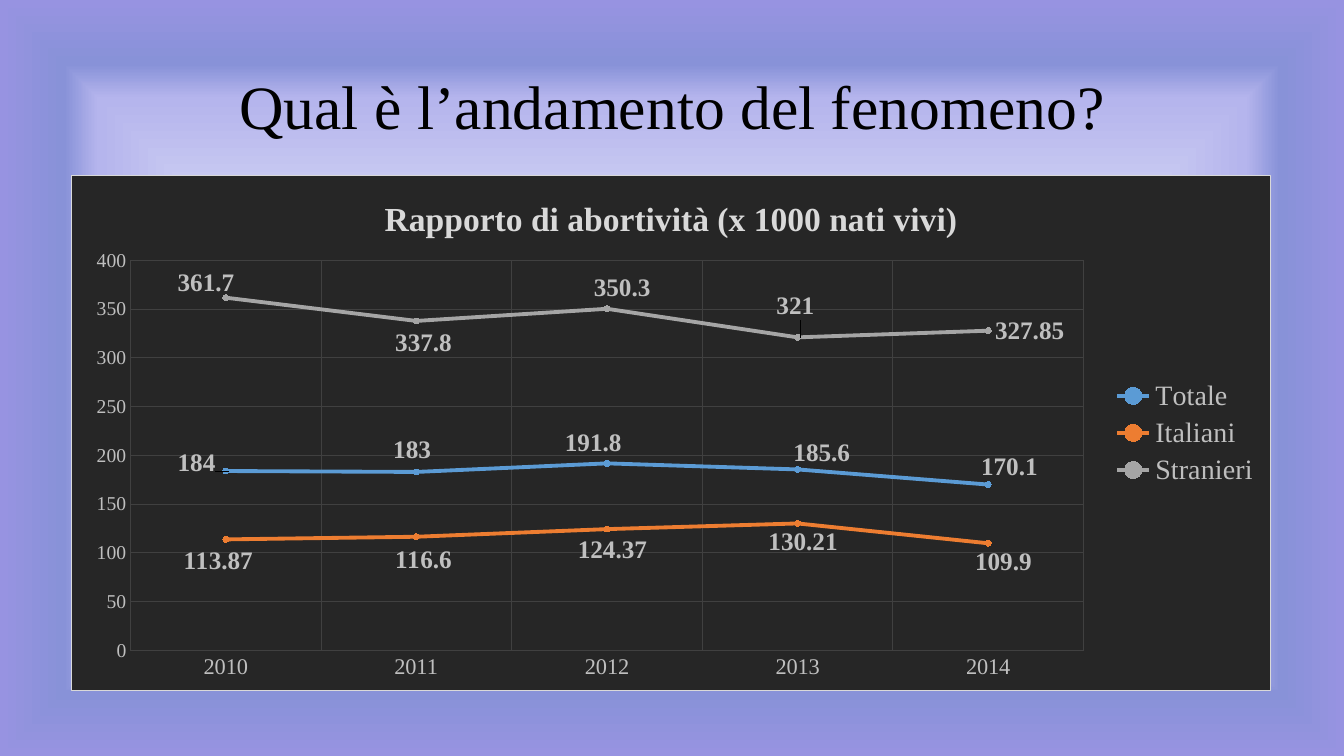
from dataclasses import dataclass

from lxml.etree import fromstring
from pptx import Presentation
from pptx.chart.data import CategoryChartData
from pptx.dml.color import RGBColor
from pptx.enum.chart import XL_CHART_TYPE as ChartType
from pptx.enum.chart import XL_LEGEND_POSITION as LegendPosition
from pptx.enum.chart import XL_MARKER_STYLE as MarkerStyle
from pptx.enum.chart import XL_TICK_MARK as TickMark
from pptx.enum.text import MSO_ANCHOR as Anchor
from pptx.enum.text import PP_ALIGN as Align
from pptx.oxml.ns import nsdecls, qn
from pptx.util import Emu, Pt


@dataclass(frozen=True)
class Theme:
    """Colours, font and type sizes of the slide."""

    font: str = "Times New Roman"
    ink: str = "000000"
    panel: str = "262626"
    border: str = "D9D9D9"
    grid: str = "404040"
    label: str = "BFBFBF"
    title_size: int = 44
    chart_title_size: int = 24
    legend_size: int = 20
    label_size: int = 18
    category_size: int = 16
    value_size: int = 14
    backdrop: tuple = ((0, "F7FAFD"), (74, "B5B5ED"), (83, "8892D8"), (100, "9793E1"))


@dataclass(frozen=True)
class Trend:
    """One line of the chart, with label offsets in px from the default place."""

    name: str
    values: tuple
    colour: str
    marker: str
    offsets: tuple


THEME = Theme()
YEARS = ("2010", "2011", "2012", "2013", "2014")
CHART_BOX = (71, 175, 1200, 516)
PLOT_BOX = (59, 85, 954, 391)
TRENDS = (
    Trend("Totale", (184, 183, 191.8, 185.6, 170.1), "5B9BD5", "9DC3E6",
          ((-55, -8), (-30, -22), (-49, -20), (-11, -16), (-14, -18))),
    Trend("Italiani", (113.87, 116.6, 124.37, 130.21, 109.9), "ED7D31", "F4B183",
          ((-49, 22), (-28, 23), (-36, 21), (-36, 19), (-20, 19))),
    Trend("Stranieri", (361.7, 337.8, 350.3, 321, 327.85), "A5A5A5", "C9C9C9",
          ((-55, -15), (-28, 22), (-20, -21), (-28, -31))),
)


def px(length):
    """Turn px into EMU."""
    return Emu(round(length * 914400 / 100.8))


def style_font(font, size, colour, bold=False):
    """Set the face, size, colour and weight of a font."""
    font.name, font.size, font.bold = THEME.font, Pt(size), bold
    font.color.rgb = RGBColor.from_string(colour)


def style_line(line, colour, width):
    """Set the colour and width of a line."""
    line.color.rgb = RGBColor.from_string(colour)
    line.width = Pt(width)


def style_fill(fill, colour):
    """Set a plain fill."""
    fill.solid()
    fill.fore_color.rgb = RGBColor.from_string(colour)


def set_backdrop(page):
    """Give the page a gradient that spreads from its centre."""
    stops = "".join(
        f'<a:gs pos="{place * 1000}"><a:srgbClr val="{colour}"/></a:gs>'
        for place, colour in THEME.backdrop)
    page.element.cSld.insert(0, fromstring(
        f'<p:bg {nsdecls("p", "a")}><p:bgPr><a:gradFill rotWithShape="1">'
        f'<a:gsLst>{stops}</a:gsLst><a:path path="shape">'
        '<a:fillToRect l="50000" t="50000" r="50000" b="50000"/></a:path>'
        '</a:gradFill><a:effectLst/></p:bgPr></p:bg>'))


def set_title(page, text):
    """Place and format the title."""
    title = page.shapes.title
    title.left, title.top, title.width, title.height = map(px, (93, 45, 1159, 130))
    title.text_frame.text = text
    title.text_frame.vertical_anchor = Anchor.MIDDLE
    para = title.text_frame.paragraphs[0]
    para.alignment, para.line_spacing = Align.CENTER, 0.9
    style_font(para.font, THEME.title_size, THEME.ink)


def manual_layout(settings):
    """Build a layout element from names and values."""
    parts = "".join(f'<c:{name} val="{value}"/>' for name, value in settings.items())
    return fromstring(f'<c:layout {nsdecls("c")}><c:manualLayout>{parts}'
                      '</c:manualLayout></c:layout>')


def place_plot(chart):
    """Fix the inner plot area inside the chart."""
    left, top, width, height = PLOT_BOX
    area = chart.element.chart.plotArea
    for layout in area.findall(qn("c:layout")):
        area.remove(layout)
    area.insert(0, manual_layout({
        "layoutTarget": "inner", "xMode": "edge", "yMode": "edge",
        "x": left / CHART_BOX[2], "y": top / CHART_BOX[3],
        "w": width / CHART_BOX[2], "h": height / CHART_BOX[3]}))


def style_panel(chart):
    """Fill and outline the whole chart."""
    chart.element.chart.addnext(fromstring(
        f'<c:spPr {nsdecls("c", "a")}><a:solidFill><a:srgbClr val="{THEME.panel}"/>'
        f'</a:solidFill><a:ln w="{Pt(0.75)}"><a:solidFill>'
        f'<a:srgbClr val="{THEME.border}"/></a:solidFill></a:ln></c:spPr>'))


def style_axis(axis, size):
    """Show labels and gridlines only."""
    axis.major_tick_mark = axis.minor_tick_mark = TickMark.NONE
    axis.format.line.fill.background()
    axis.has_major_gridlines = True
    style_line(axis.major_gridlines.format.line, THEME.grid, 0.75)
    style_font(axis.tick_labels.font, size, THEME.label)


def style_trend(series, trend):
    """Format a line, its markers and its labels."""
    series.smooth = False
    style_line(series.format.line, trend.colour, 2.75)
    series.marker.style, series.marker.size = MarkerStyle.CIRCLE, 4
    style_fill(series.marker.format.fill, trend.marker)
    style_line(series.marker.format.line, trend.colour, 0.75)
    labels = series.data_labels
    labels.show_value = True
    style_font(labels.font, THEME.label_size, THEME.label, bold=True)
    for index, (right, down) in enumerate(trend.offsets):
        style_font(series.points[index].data_label.font,
                   THEME.label_size, THEME.label, bold=True)
        layout = manual_layout({"x": right / CHART_BOX[2], "y": down / CHART_BOX[3]})
        labels._element.findall(qn("c:dLbl"))[index].find(qn("c:idx")).addnext(layout)


def add_trend_chart(page, heading):
    """Add the line chart with its title, axes and legend."""
    data = CategoryChartData()
    data.categories = YEARS
    for trend in TRENDS:
        data.add_series(trend.name, trend.values)
    chart = page.shapes.add_chart(
        ChartType.LINE_MARKERS, *map(px, CHART_BOX), data).chart
    style_font(chart.font, THEME.value_size, THEME.ink)
    style_panel(chart)
    place_plot(chart)
    chart.has_title = True
    chart.chart_title.text_frame.text = heading
    style_font(chart.chart_title.text_frame.paragraphs[0].font,
               THEME.chart_title_size, THEME.border, bold=True)
    chart.has_legend = True
    chart.legend.position = LegendPosition.RIGHT
    chart.legend.include_in_layout = False
    style_font(chart.legend.font, THEME.legend_size, THEME.label)
    style_axis(chart.category_axis, THEME.category_size)
    style_axis(chart.value_axis, THEME.value_size)
    scale = chart.value_axis
    scale.minimum_scale, scale.maximum_scale, scale.major_unit = 0, 400, 50
    chart.plots[0].vary_by_categories = False
    for series, trend in zip(chart.plots[0].series, TRENDS):
        style_trend(series, trend)


def main():
    """Build the slide and save it."""
    deck = Presentation()
    deck.slide_width, deck.slide_height = px(1344), px(756)
    page = deck.slides.add_slide(deck.slide_layouts[5])
    set_backdrop(page)
    set_title(page, "Qual è l’andamento del fenomeno?")
    add_trend_chart(page, "Rapporto di abortività (x 1000 nati vivi)")
    deck.save("out.pptx")


if __name__ == "__main__":
    main()
